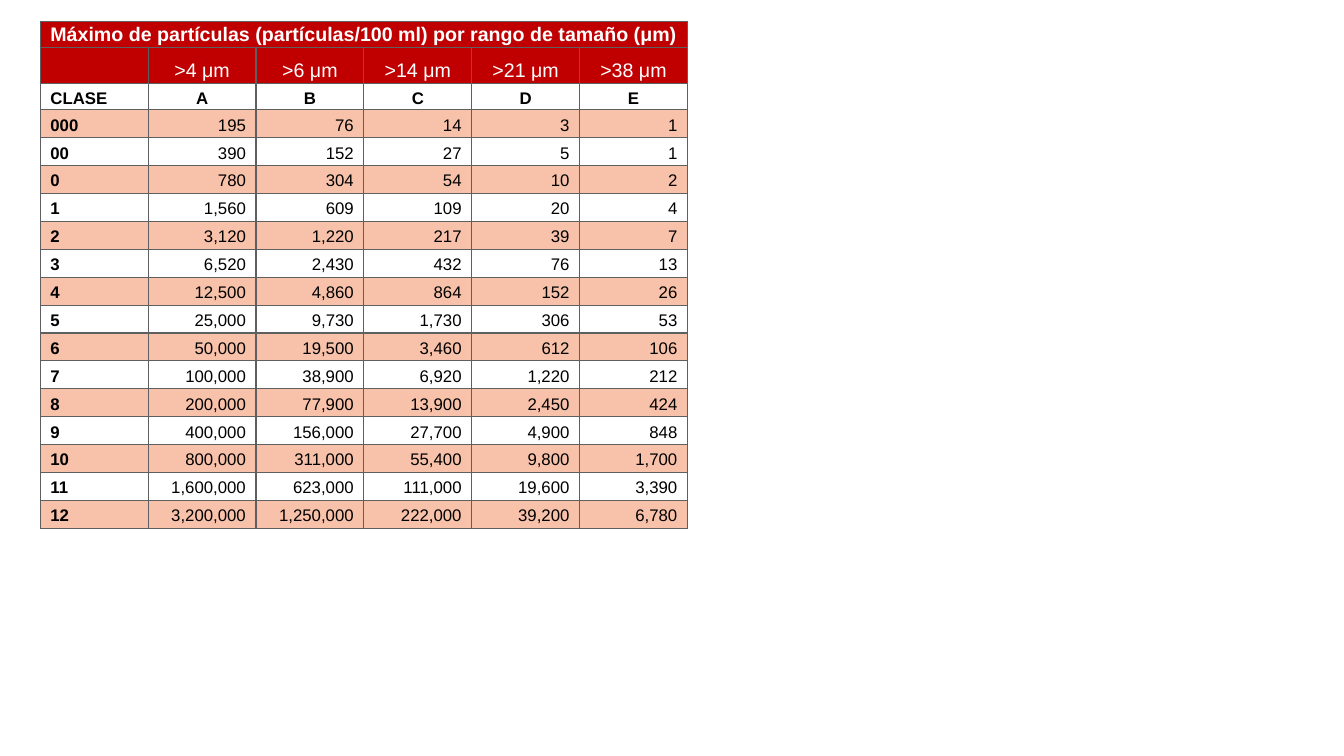
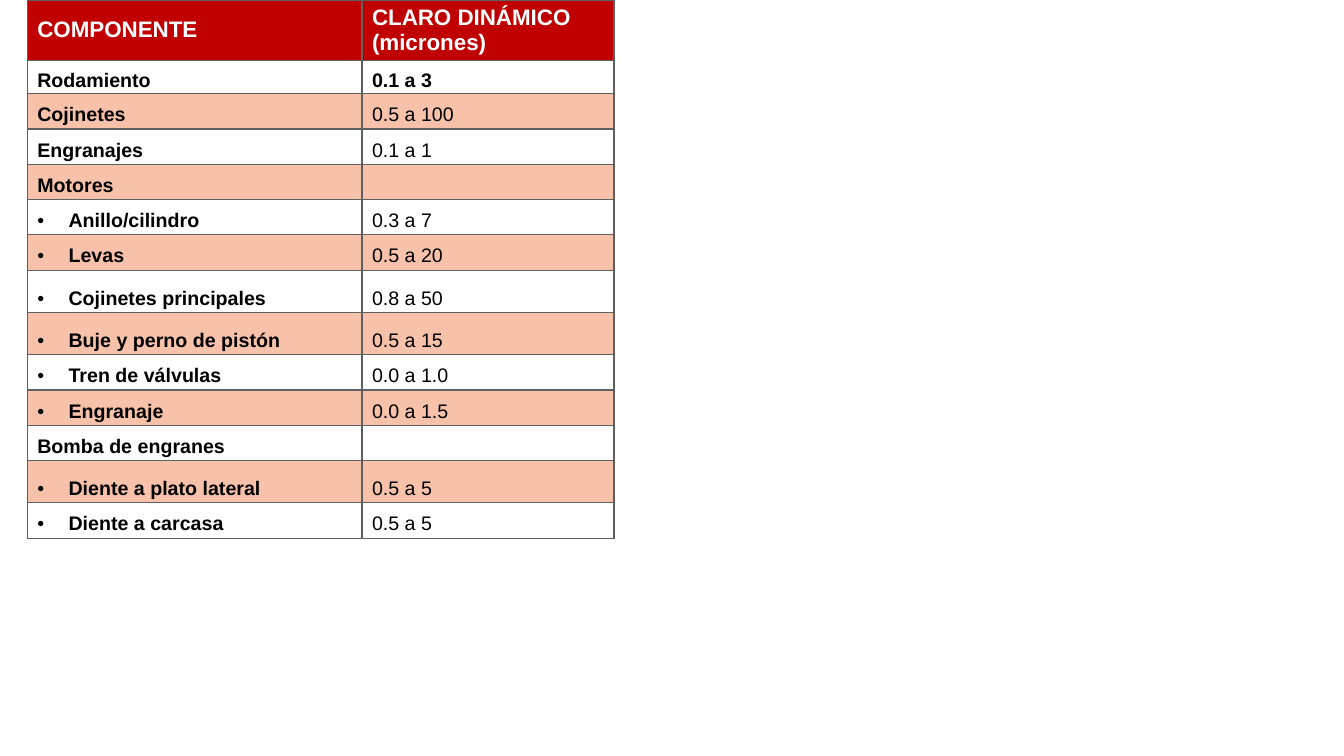
from lxml import etree
from pptx import Presentation
from pptx import util as u
from pptx.dml import color
from pptx.enum import text
from pptx.oxml import ns

COLORS = {
    "header": "C00000",
    "band": "F8C1A9",
    "plain": "FFFFFF",
    "border": "5E5F61",
    "light_text": "FFFFFF",
    "dark_text": "000000",
}
FONT = "Arial"
LEFT, CENTER, RIGHT = text.PP_ALIGN.LEFT, text.PP_ALIGN.CENTER, text.PP_ALIGN.RIGHT
BOTTOM, MIDDLE = text.MSO_ANCHOR.BOTTOM, text.MSO_ANCHOR.MIDDLE


def add_grid(slide, left, top, widths, heights):
    shape = slide.shapes.add_table(
        len(heights), len(widths), u.Inches(left), u.Inches(top),
        u.Inches(sum(widths)), u.Inches(sum(heights)))
    table = shape.table
    table.first_row = table.horz_banding = False
    for column, width in zip(table.columns, widths):
        column.width = u.Inches(width)
    for row, height in zip(table.rows, heights):
        row.height = u.Inches(height)
    return table


def format_cell(cell, words, fill, size, bold, align=LEFT, anchor=BOTTOM,
                side=0.1, edge=0.03, bullet=False):
    layout = {
        "vertical_anchor": anchor,
        "margin_left": u.Inches(side),
        "margin_right": u.Inches(side),
        "margin_top": u.Inches(edge),
        "margin_bottom": u.Inches(edge),
    }
    for name, value in layout.items():
        setattr(cell, name, value)
    properties = cell._tc.get_or_add_tcPr()
    for border in ("a:lnL", "a:lnR", "a:lnT", "a:lnB"):
        line = etree.SubElement(properties, ns.qn(border), w=str(u.Pt(1)))
        solid = etree.SubElement(line, ns.qn("a:solidFill"))
        etree.SubElement(solid, ns.qn("a:srgbClr"), val=COLORS["border"])
    cell.fill.solid()
    cell.fill.fore_color.rgb = color.RGBColor.from_string(COLORS[fill])

    paragraph = cell.text_frame.paragraphs[0]
    paragraph.alignment = align
    if not words:
        etree.SubElement(paragraph._p, ns.qn("a:endParaRPr"), sz=str(size * 100))
        return
    if bullet:
        indent = u.Inches(0.31)
        paragraph_properties = paragraph._p.get_or_add_pPr()
        paragraph_properties.set("marL", str(indent))
        paragraph_properties.set("indent", str(-indent))
        etree.SubElement(paragraph_properties, ns.qn("a:buFont"), typeface=FONT)
        etree.SubElement(paragraph_properties, ns.qn("a:buChar"), char="•")
    run = paragraph.add_run()
    run.text = words
    for name, value in {"name": FONT, "size": u.Pt(size), "bold": bold}.items():
        setattr(run.font, name, value)
    ink = "light_text" if fill == "header" else "dark_text"
    run.font.color.rgb = color.RGBColor.from_string(COLORS[ink])


presentation = Presentation()
presentation.slide_width = u.Inches(13.33)
presentation.slide_height = u.Inches(7.5)
blank_layout = presentation.slide_layouts[6]

particle_title = "Máximo de partículas (partículas/100 ml) por rango de tamaño (μm)"
size_ranges = ["", ">4 μm", ">6 μm", ">14 μm", ">21 μm", ">38 μm"]
class_letters = ["CLASE", "A", "B", "C", "D", "E"]
particle_limits = [
    ["000", "195", "76", "14", "3", "1"],
    ["00", "390", "152", "27", "5", "1"],
    ["0", "780", "304", "54", "10", "2"],
    ["1", "1,560", "609", "109", "20", "4"],
    ["2", "3,120", "1,220", "217", "39", "7"],
    ["3", "6,520", "2,430", "432", "76", "13"],
    ["4", "12,500", "4,860", "864", "152", "26"],
    ["5", "25,000", "9,730", "1,730", "306", "53"],
    ["6", "50,000", "19,500", "3,460", "612", "106"],
    ["7", "100,000", "38,900", "6,920", "1,220", "212"],
    ["8", "200,000", "77,900", "13,900", "2,450", "424"],
    ["9", "400,000", "156,000", "27,700", "4,900", "848"],
    ["10", "800,000", "311,000", "55,400", "9,800", "1,700"],
    ["11", "1,600,000", "623,000", "111,000", "19,600", "3,390"],
    ["12", "3,200,000", "1,250,000", "222,000", "39,200", "6,780"],
]

slide = presentation.slides.add_slide(blank_layout)
table = add_grid(slide, 0.4, 0.21, [1.07] * 6,
                 [0.26, 0.36, 0.26] + [0.277] * len(particle_limits))
table.cell(0, 0).merge(table.cell(0, 5))
for column in range(6):
    title = particle_title if column == 0 else ""
    format_cell(table.cell(0, column), title, "header", 14, True, CENTER,
                side=0.05, edge=0.02)
    format_cell(table.cell(1, column), size_ranges[column], "header", 14, False,
                CENTER, edge=0.02)
    format_cell(table.cell(2, column), class_letters[column], "plain", 12, True,
                CENTER if column else LEFT, edge=0.02)
    for index, limits in enumerate(particle_limits):
        format_cell(table.cell(index + 3, column), limits[column],
                    "plain" if index % 2 else "band", 12, column == 0,
                    RIGHT if column else LEFT)

clearance_headers = ["COMPONENTE", "CLARO DINÁMICO (micrones)"]
clearances = [
    ("Rodamiento", "0.1 a 3", False, 0.33),
    ("Cojinetes", "0.5 a 100", False, 0.35),
    ("Engranajes", "0.1 a 1", False, 0.35),
    ("Motores", "", False, 0.35),
    ("Anillo/cilindro", "0.3 a 7", True, 0.35),
    ("Levas", "0.5 a 20", True, 0.35),
    ("Cojinetes principales", "0.8 a 50", True, 0.42),
    ("Buje y perno de pistón", "0.5 a 15", True, 0.42),
    ("Tren de válvulas", "0.0 a 1.0", True, 0.35),
    ("Engranaje", "0.0 a 1.5", True, 0.35),
    ("Bomba de engranes", "", False, 0.35),
    ("Diente a plato lateral", "0.5 a 5", True, 0.42),
    ("Diente a carcasa", "0.5 a 5", True, 0.35),
]

slide = presentation.slides.add_slide(blank_layout)
table = add_grid(slide, 0.27, 0, [3.32, 2.5], [0.6] + [row[3] for row in clearances])
for column, header in enumerate(clearance_headers):
    format_cell(table.cell(0, column), header, "header", 16, True,
                anchor=MIDDLE, edge=0.02)
for index, (component, clearance, bullet, height) in enumerate(clearances):
    fill = "band" if index % 2 else "plain"
    edge = 0.03 if index else 0.02
    format_cell(table.cell(index + 1, 0), component, fill, 14, True,
                edge=edge, bullet=bullet)
    format_cell(table.cell(index + 1, 1), clearance, fill, 14, index == 0, edge=edge)

presentation.save("out.pptx")
